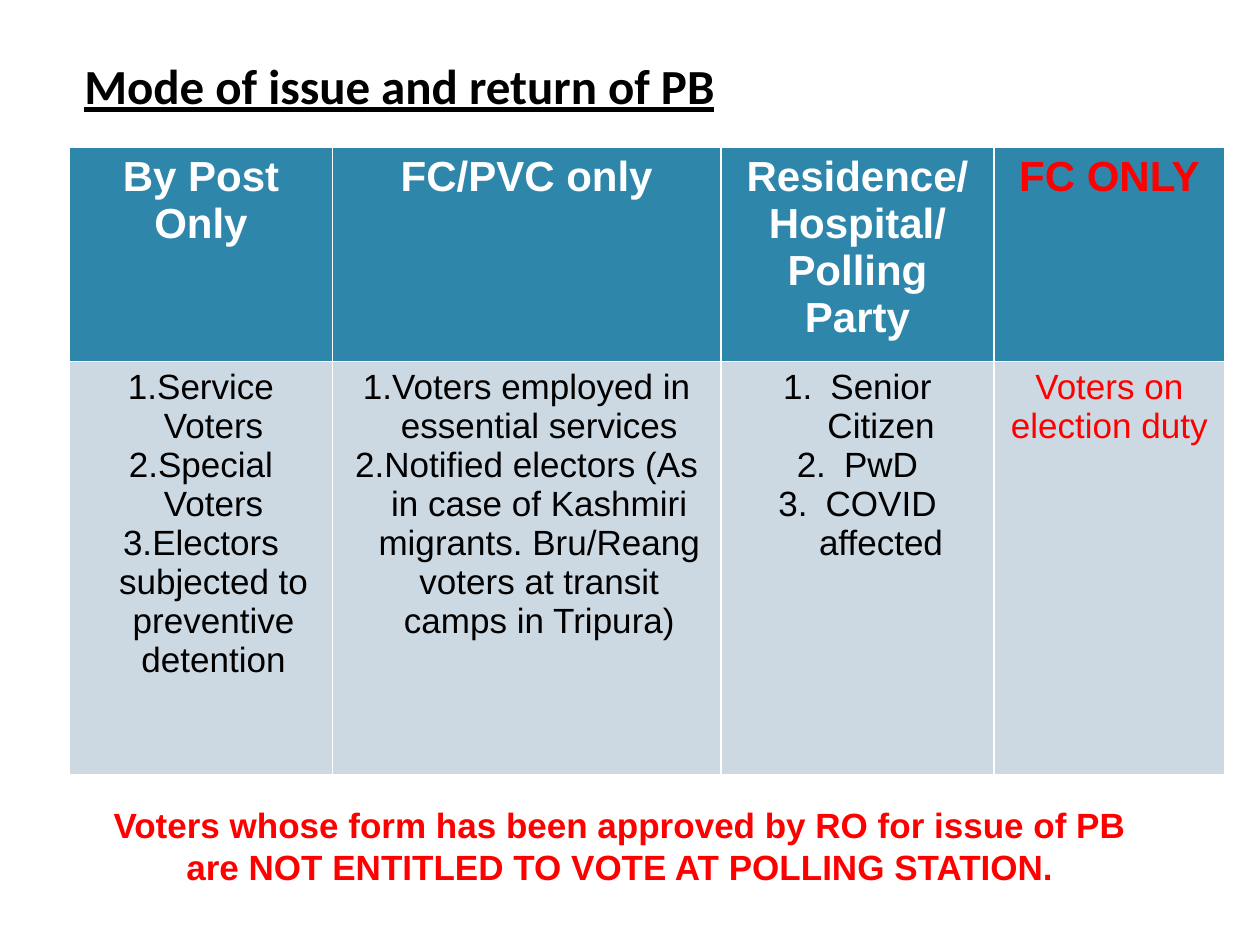
from dataclasses import dataclass

from lxml.etree import SubElement
from pptx import Presentation
from pptx.dml.color import RGBColor
from pptx.enum.text import PP_ALIGN
from pptx.oxml.ns import qn
from pptx.util import Pt


@dataclass(frozen=True)
class Theme:
    """Colours, typefaces and type sizes of the slide."""
    ink: RGBColor = RGBColor(0x00, 0x00, 0x00)
    paper: RGBColor = RGBColor(0xFF, 0xFF, 0xFF)
    alert: RGBColor = RGBColor(0xFF, 0x00, 0x00)
    header_fill: RGBColor = RGBColor(0x2E, 0x86, 0xAB)
    body_fill: RGBColor = RGBColor(0xCD, 0xD9, 0xE2)
    title_font: str = "Calibri"
    text_font: str = "Arial"
    title_size: Pt = Pt(28)
    header_size: Pt = Pt(24)
    text_size: Pt = Pt(20)


@dataclass(frozen=True)
class Mode:
    """One column: a way of issuing ballots and the voters it serves."""
    heading: str
    voters: tuple[str, ...]
    width: float
    number_indent: float = 0
    heading_color: RGBColor = Theme.paper
    voter_color: RGBColor = Theme.ink


MODES = (
    Mode("By Post Only",
         ("Service Voters", "Special Voters",
          "Electors subjected to preventive detention"), 150.5, 14.4),
    Mode("FC/PVC only",
         ("Voters employed in essential services",
          "Notified electors (As in case of Kashmiri migrants. "
          "Bru/Reang voters at transit camps in Tripura)"), 221.8, 14.4),
    Mode("Residence/ Hospital/ Polling Party",
         ("Senior Citizen", "PwD", "COVID affected"), 156.2, 27),
    Mode("FC ONLY", ("Voters on election duty",), 131.8,
         heading_color=Theme.alert, voter_color=Theme.alert),
)


def style_text(frame, size: Pt, color: RGBColor, bold: bool,
               font: str = Theme.text_font,
               align: PP_ALIGN = PP_ALIGN.CENTER) -> None:
    """Format every paragraph and run of a text frame alike."""
    for paragraph in frame.paragraphs:
        paragraph.alignment = align
        for run in paragraph.runs:
            run.font.name = font
            run.font.size = size
            run.font.bold = bold
            run.font.color.rgb = color


def indent(paragraph, left: Pt, first: Pt):
    """Set a paragraph's hanging indent and return its properties."""
    properties = paragraph._p.get_or_add_pPr()
    properties.set("marL", str(left))
    properties.set("indent", str(first))
    return properties


def number(paragraph, hang: float) -> None:
    """Number a paragraph automatically."""
    properties = indent(paragraph, Pt(hang), Pt(-hang))
    SubElement(properties, qn("a:buFont"), typeface="+mj-lt")
    SubElement(properties, qn("a:buAutoNum"), type="arabicPeriod")


def fill_cell(cell, text: str, fill: RGBColor) -> None:
    """Put text on a plain cell background."""
    cell.text_frame.text = text
    cell.fill.solid()
    cell.fill.fore_color.rgb = fill


def add_title(slide, theme: Theme) -> None:
    """Add the underlined slide title."""
    title = slide.shapes.add_textbox(Pt(36), Pt(12.24), Pt(648), Pt(498.24)).text_frame
    title.word_wrap = True
    title.margin_left = title.margin_right = Pt(5)
    title.margin_top = title.margin_bottom = Pt(2.9)
    title.text = "Mode of issue and return of PB"
    style_text(title, theme.title_size, theme.ink, True, theme.title_font, PP_ALIGN.JUSTIFY)
    heading = title.paragraphs[0]
    heading.line_spacing = 1.5
    heading.space_before = Pt(8)
    heading.runs[0].font.underline = True
    indent(heading, Pt(36), Pt(-28.8))


def add_modes(slide, theme: Theme) -> None:
    """Add the table of issue modes."""
    table = slide.shapes.add_table(2, len(MODES), Pt(39.6), Pt(84.24),
                                   Pt(sum(mode.width for mode in MODES)), Pt(317.5)).table
    table.rows[0].height, table.rows[1].height = Pt(81.4), Pt(236.1)
    for column, mode in enumerate(MODES):
        table.columns[column].width = Pt(mode.width)
        header, body = table.cell(0, column), table.cell(1, column)
        fill_cell(header, mode.heading, theme.header_fill)
        style_text(header.text_frame, theme.header_size, mode.heading_color, True)
        fill_cell(body, "\n".join(mode.voters), theme.body_fill)
        style_text(body.text_frame, theme.text_size, mode.voter_color, False)
        if mode.number_indent:
            for voter in body.text_frame.paragraphs:
                number(voter, mode.number_indent)


def add_warning(slide, theme: Theme) -> None:
    """Add the closing warning to voters."""
    warning = slide.shapes.add_textbox(Pt(48.24), Pt(455.76), Pt(612), Pt(55.44)).text_frame
    warning.word_wrap = True
    warning.text = ("Voters whose form has been approved by RO for issue of PB "
                    "are NOT ENTITLED TO VOTE AT POLLING STATION.")
    style_text(warning, theme.text_size, theme.alert, True)


def main() -> None:
    """Build and save the slide."""
    deck = Presentation()
    deck.slide_width, deck.slide_height = Pt(720), Pt(540)
    slide = deck.slides.add_slide(deck.slide_layouts[6])
    theme = Theme()
    add_title(slide, theme)
    add_modes(slide, theme)
    add_warning(slide, theme)
    deck.save("out.pptx")


if __name__ == "__main__":
    main()
